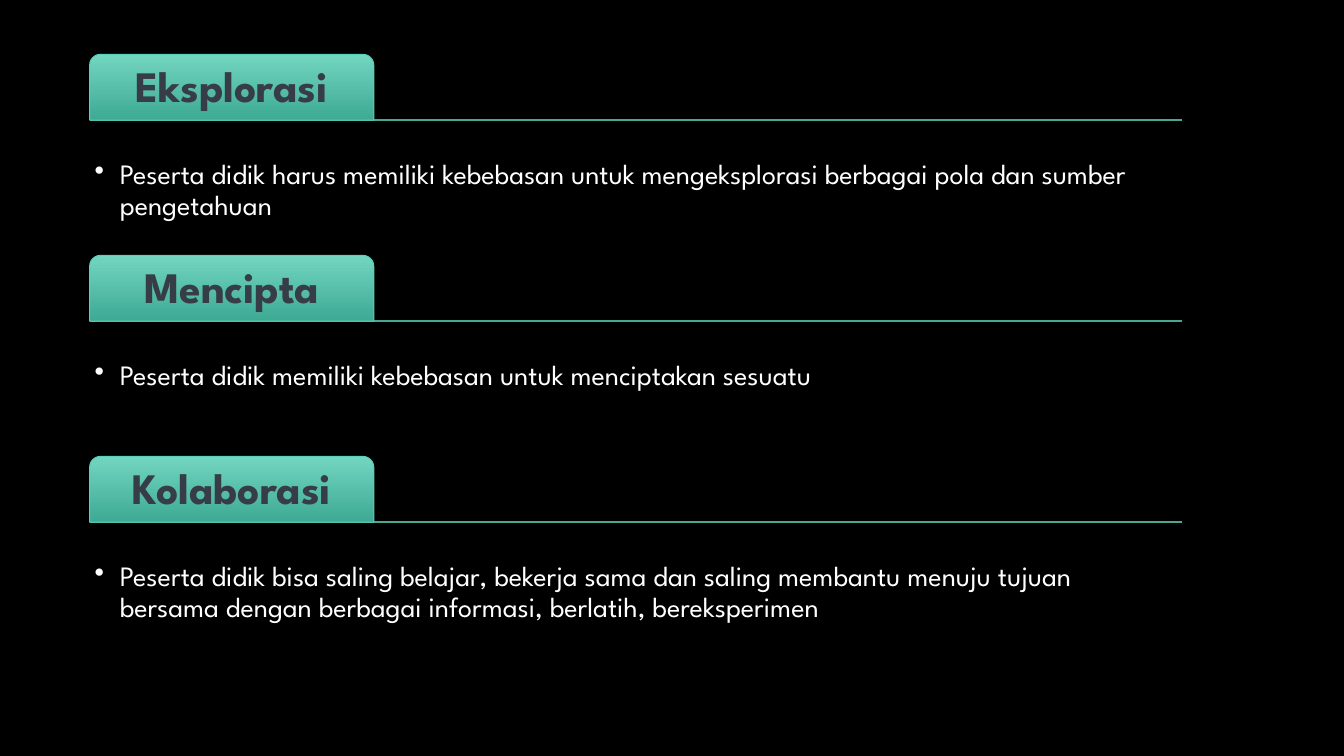
"""Build a slide with three tabbed headings, each with a rule and a bullet."""
import pptx
import pptx.dml.color
import pptx.enum.shapes
import pptx.enum.text
import pptx.oxml
import pptx.oxml.ns
import pptx.util

Pt = pptx.util.Pt
FONT = "League Spartan"
LEFT, FIRST_RULE, STEP = 64, 85.8, 143.6
RULE_WIDTH, BODY_HEIGHT = 780, 94
TAB_WIDTH, TAB_HEIGHT = 203, 47

sections = [
    ("Eksplorasi", "Peserta didik harus memiliki kebebasan untuk mengeksplorasi "
                   "berbagai pola dan sumber pengetahuan"),
    ("Mencipta", "Peserta didik memiliki kebebasan untuk menciptakan sesuatu"),
    ("Kolaborasi", "Peserta didik bisa saling belajar, bekerja sama dan saling membantu "
                   "menuju tujuan bersama dengan berbagai informasi, berlatih, bereksperimen"),
]


def color(value):
    return pptx.dml.color.RGBColor.from_string(value)


def add_text(para, text, size, value, bold):
    para.line_spacing = 0.9
    span = para.add_run()
    span.text = text
    span.font.name = FONT
    span.font.size = Pt(size)
    span.font.bold = bold
    span.font.color.rgb = color(value)


deck = pptx.Presentation()
deck.slide_width, deck.slide_height = Pt(960), Pt(540)
page = deck.slides.add_slide(deck.slide_layouts[6])
page.background.fill.solid()
page.background.fill.fore_color.rgb = color("000000")

for index, (heading, detail) in enumerate(sections):
    rule_top = FIRST_RULE + index * STEP

    rule = page.shapes.add_connector(
        pptx.enum.shapes.MSO_CONNECTOR.STRAIGHT,
        Pt(LEFT), Pt(rule_top), Pt(LEFT + RULE_WIDTH), Pt(rule_top))
    rule.line.color.rgb = color("48A793")
    rule.line.width = Pt(1.5)
    rule._element.spPr.append(pptx.oxml.parse_xml(
        f"<a:effectLst {pptx.oxml.ns.nsdecls('a')}/>"))

    tab = page.shapes.add_shape(
        pptx.enum.shapes.MSO_SHAPE.ROUND_2_SAME_RECTANGLE,
        Pt(LEFT), Pt(rule_top - TAB_HEIGHT), Pt(TAB_WIDTH), Pt(TAB_HEIGHT))
    tab.shadow.inherit = False
    tab.adjustments[0] = 0.167
    tab.adjustments[1] = 0
    tab.fill.gradient()
    tab.fill.gradient_angle = 270
    for stop, position, value in zip(tab.fill.gradient_stops, (0, 1), ("72D5C0", "3EAA94")):
        stop.position = position
        stop.color.rgb = color(value)
    tab.line.color.rgb = color("5AD0B8")
    tab.line.width = Pt(0.75)
    frame = tab.text_frame
    frame.word_wrap = True
    frame.vertical_anchor = pptx.enum.text.MSO_ANCHOR.MIDDLE
    frame.margin_left = frame.margin_right = frame.margin_top = frame.margin_bottom = Pt(4)
    para = frame.paragraphs[0]
    para.alignment = pptx.enum.text.PP_ALIGN.CENTER
    add_text(para, heading, 31, "363D46", True)

    box = page.shapes.add_textbox(Pt(LEFT), Pt(rule_top), Pt(RULE_WIDTH), Pt(BODY_HEIGHT))
    frame = box.text_frame
    frame.word_wrap = True
    frame.margin_left = frame.margin_right = frame.margin_bottom = Pt(3.6)
    frame.margin_top = Pt(29)
    para = frame.paragraphs[0]
    properties = para._p.get_or_add_pPr()
    properties.set("marL", str(Pt(18)))
    properties.set("indent", str(Pt(-18)))
    properties.append(pptx.oxml.parse_xml(
        f"<a:buChar {pptx.oxml.ns.nsdecls('a')} char='•'/>"))
    add_text(para, detail, 20, "FFFFFF", False)

deck.save("out.pptx")
